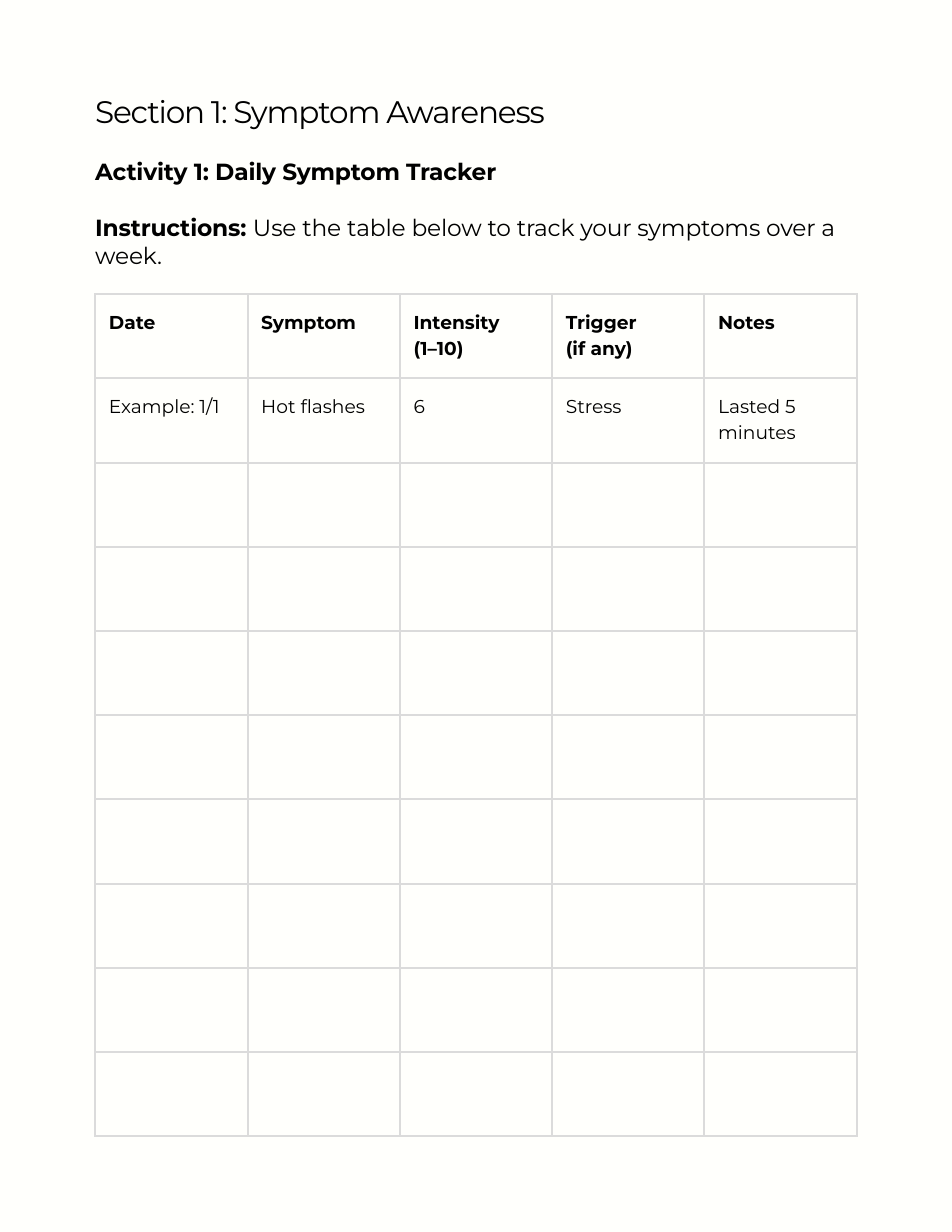
from dataclasses import dataclass

from lxml import etree
from pptx import Presentation
from pptx import util as u
from pptx.dml.color import RGBColor
from pptx.enum import text
from pptx.oxml import ns

INK, RULE, PAPER = "000000", "DBDBDB", "FFFFFC"
LEFT, WIDTH = 2.16, 17.27
COLUMNS, ROWS = 5, 10


@dataclass
class Span:
    words: str
    size: float
    bold: bool = False
    spacing: int = 0


@dataclass
class Block:
    top: float
    height: float
    paras: list[list[Span]]


def colour(value: str) -> RGBColor:
    return RGBColor.from_string(value)


def write(frame, paras: list[list[Span]], leading: float, gap: float = 0) -> None:
    frame.word_wrap = True
    for index, spans in enumerate(paras):
        para = frame.paragraphs[0] if index == 0 else frame.add_paragraph()
        para.alignment = text.PP_ALIGN.LEFT
        para.line_spacing = u.Pt(leading)
        para.space_before = u.Pt(gap if index else 0)
        for item in spans:
            span = para.add_run()
            span.text = item.words
            formats = {"name": "Montserrat", "size": u.Pt(item.size), "bold": item.bold}
            for name, value in formats.items():
                setattr(span.font, name, value)
            span.font.color.rgb = colour(INK)
            if item.spacing:
                span._r.get_or_add_rPr().set("spc", str(item.spacing))


def add_block(page, block: Block) -> None:
    box = page.shapes.add_textbox(u.Cm(LEFT), u.Cm(block.top), u.Cm(WIDTH), u.Cm(block.height))
    for side in ("left", "top", "right", "bottom"):
        setattr(box.text_frame, f"margin_{side}", 0)
    write(box.text_frame, block.paras, leading=18, gap=18)


def add_borders(cell) -> None:
    properties = cell._tc.get_or_add_tcPr()
    for side in "LRTB":
        line = etree.SubElement(properties, ns.qn(f"a:ln{side}"), w=str(u.Pt(1.5)))
        fill = etree.SubElement(line, ns.qn("a:solidFill"))
        etree.SubElement(fill, ns.qn("a:srgbClr"), val=RULE)


def add_tracker(page, filled: list[list[str]]) -> None:
    frame = page.shapes.add_table(ROWS, COLUMNS, u.Cm(LEFT), u.Cm(6.67), u.Cm(WIDTH), u.Cm(19.1))
    table = frame.table
    table.first_row = table.horz_banding = False
    for cell in table.iter_cells():
        for side in ("left", "top", "right", "bottom"):
            setattr(cell, f"margin_{side}", u.Cm(0.31))
        add_borders(cell)
        cell.fill.background()
    for row, entries in enumerate(filled):
        for column, entry in enumerate(entries):
            paras = [[Span(line, 12, bold=row == 0)] for line in entry.split("\n")]
            write(table.cell(row, column).text_frame, paras, leading=16.8)


def main() -> None:
    deck = Presentation()
    deck.slide_width, deck.slide_height = u.Cm(21.59), u.Cm(27.94)
    page = deck.slides.add_slide(deck.slide_layouts[6])
    page.background.fill.solid()
    page.background.fill.fore_color.rgb = colour(PAPER)

    blocks = [
        Block(2.31, 0.69, [[Span("Section 1: Symptom Awareness", 20, spacing=-80)]]),
        Block(3.56, 2.36, [
            [Span("Activity 1: Daily Symptom Tracker", 15, True, -10)],
            [
                Span("Instructions: ", 15, True, -10),
                Span("Use the table below to track your symptoms over a week.", 15, spacing=-10),
            ],
        ]),
    ]
    for block in blocks:
        add_block(page, block)

    add_tracker(page, [
        ["Date", "Symptom", "Intensity\n(1–10)", "Trigger\n(if any)", "Notes"],
        ["Example: 1/1", "Hot flashes", "6", "Stress", "Lasted 5 minutes"],
    ])
    deck.save("out.pptx")


if __name__ == "__main__":
    main()
